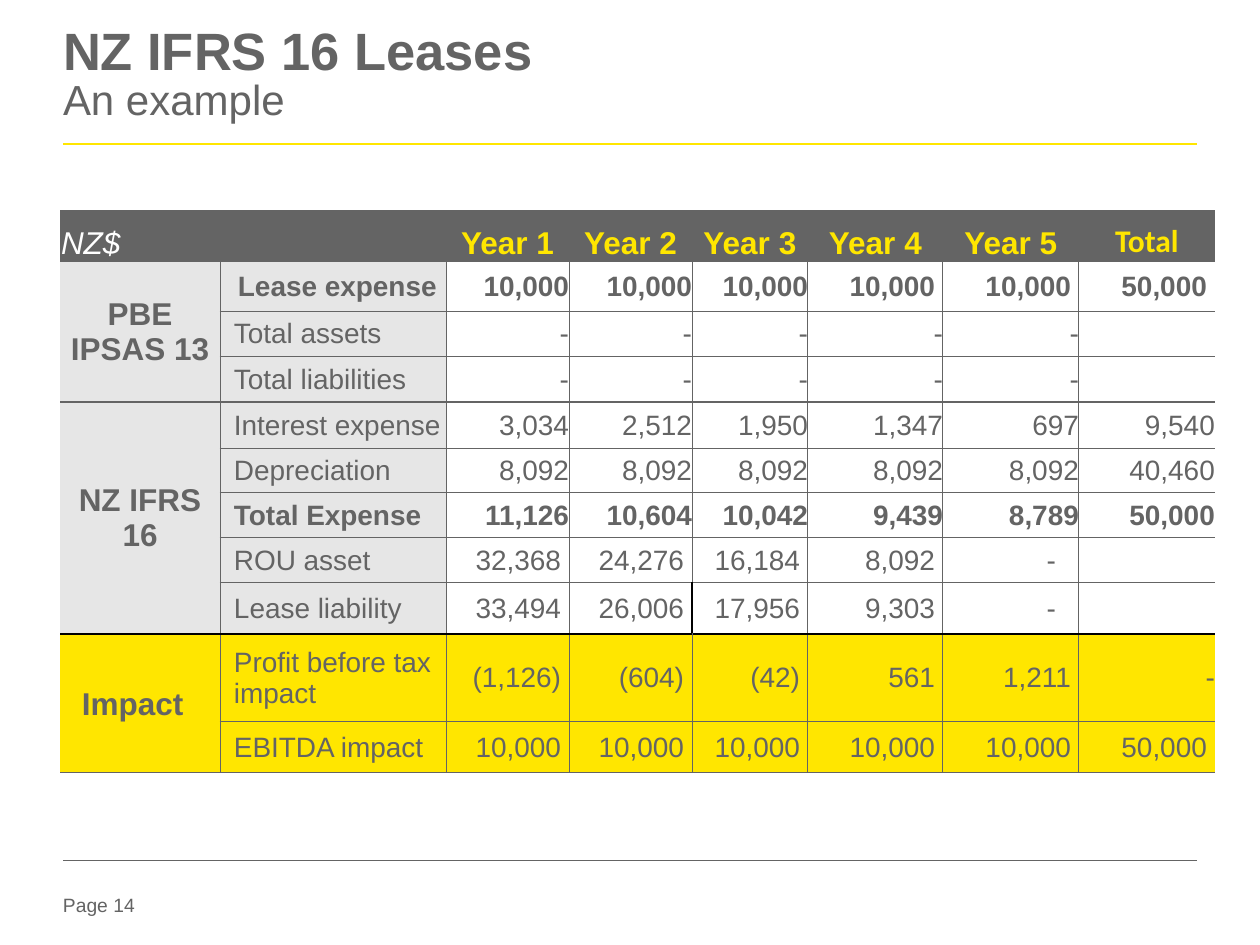
"""Build the lease accounting example slide with its five-year comparison table."""
from typing import NamedTuple, Optional

from lxml.etree import SubElement
from pptx import Presentation
from pptx.dml.color import RGBColor
from pptx.enum.shapes import MSO_CONNECTOR as Connector
from pptx.enum.text import MSO_ANCHOR as Anchor, MSO_AUTO_SIZE as AutoSize, PP_ALIGN as Align
from pptx.oxml.ns import qn
from pptx.util import Emu, Pt

GREY = RGBColor(0x64, 0x64, 0x64)
PALE = RGBColor(0xE6, 0xE6, 0xE6)
YELLOW = RGBColor(0xFF, 0xE6, 0x00)
WHITE = RGBColor(0xFF, 0xFF, 0xFF)
BLACK = RGBColor(0x00, 0x00, 0x00)


class Rule(NamedTuple):
    color: RGBColor
    points: float


class Measure(NamedTuple):
    label: str
    amounts: tuple[str, ...]
    insets: tuple[int, ...] = (0,) * 6
    bold: bool = False
    indent: int = 14


class Standard(NamedTuple):
    name: str
    first_row: int
    last_row: int
    fill: RGBColor


THIN = Rule(GREY, 0.5)
THICK = Rule(GREY, 1.5)
DARK = Rule(BLACK, 1)
PADDED = (8,) * 6

COLUMN_WIDTHS = (160, 226, 123, 123, 116, 135, 136, 136)
ROW_HEIGHTS = (51, 50, 45, 46, 46, 45, 45, 45, 51, 88, 51)
HEADINGS = ("Year 1", "Year 2", "Year 3", "Year 4", "Year 5", "Total")
NO_BALANCE = ("-",) * 5 + ("",)
MEASURES = (
    Measure("Lease expense", ("10,000",) * 5 + ("50,000",), (0, 0, 0, 8, 8, 8), True, 18),
    Measure("Total assets", NO_BALANCE),
    Measure("Total liabilities", NO_BALANCE),
    Measure("Interest expense", ("3,034", "2,512", "1,950", "1,347", "697", "9,540")),
    Measure("Depreciation", ("8,092",) * 5 + ("40,460",)),
    Measure("Total Expense", ("11,126", "10,604", "10,042", "9,439", "8,789", "50,000"), bold=True),
    Measure("ROU asset", ("32,368", "24,276", "16,184", "8,092", "-", ""), (8, 8, 8, 8, 23, 0)),
    Measure("Lease liability", ("33,494", "26,006", "17,956", "9,303", "-", ""), (8, 8, 8, 8, 23, 0)),
    Measure("Profit before tax impact", ("(1,126)", "(604)", "(42)", "561", "1,211", "-"), (8, 8, 8, 8, 8, 0)),
    Measure("EBITDA impact", ("10,000",) * 5 + ("50,000",), PADDED),
)
STANDARDS = (
    Standard("PBE IPSAS 13", 1, 3, PALE),
    Standard("NZ IFRS 16", 4, 8, PALE),
    Standard("Impact", 9, 10, YELLOW),
)
LAST_ROW = len(ROW_HEIGHTS) - 1
LAST_COLUMN = len(COLUMN_WIDTHS) - 1


def px(length: int) -> Emu:
    return Emu(round(length * 914400 / 126))


def add_run(paragraph, text: str, size: int, color: RGBColor = GREY, bold: bool = False,
            italic: bool = False, face: str = "Arial") -> None:
    run = paragraph.add_run()
    run.text = text
    font = run.font
    font.name, font.size, font.bold, font.italic = face, Pt(size), bold, italic
    font.color.rgb = color


def clear_margins(frame) -> None:
    frame.margin_left = frame.margin_top = frame.margin_right = frame.margin_bottom = 0
    frame.word_wrap = True
    frame.auto_size = AutoSize.NONE
    frame.vertical_anchor = Anchor.TOP


def add_divider(slide, y: int, color: RGBColor, points: float) -> None:
    divider = slide.shapes.add_connector(Connector.STRAIGHT, px(63), px(y), px(1197), px(y))
    divider.line.color.rgb = color
    divider.line.width = Pt(points)
    SubElement(divider._element.spPr, qn("a:effectLst"))


def rule_below(row: int, column: int) -> Optional[Rule]:
    if row == 3:
        return THICK
    if row == 8:
        return DARK
    return None if column == 0 and row not in (0, LAST_ROW) else THIN


def rule_right(row: int, column: int) -> Optional[Rule]:
    if (row, column) == (8, 3):
        return DARK
    return None if row == 0 or column == LAST_COLUMN else THIN


def set_borders(cell, row: int, column: int, bottom_row: int) -> None:
    borders = {
        "a:lnL": rule_right(row, column - 1) if column else None,
        "a:lnR": rule_right(row, column),
        "a:lnT": rule_below(row - 1, column) if row else None,
        "a:lnB": rule_below(bottom_row, column),
    }
    properties = cell._tc.get_or_add_tcPr()
    for tag, rule in borders.items():
        line = SubElement(properties, qn(tag))
        if rule is None:
            SubElement(line, qn("a:noFill"))
            continue
        line.set("w", str(Pt(rule.points)))
        SubElement(SubElement(line, qn("a:solidFill")), qn("a:srgbClr")).set("val", str(rule.color))


def format_cell(cell, row: int, column: int) -> None:
    bottom_row = row + cell.span_height - 1 if cell.is_merge_origin else row
    set_borders(cell, row, column, bottom_row)
    cell.margin_left = cell.margin_right = cell.margin_top = px(1)
    cell.margin_bottom = 0
    cell.vertical_anchor = Anchor.MIDDLE
    if row == 0:
        fill = GREY
    elif row >= STANDARDS[-1].first_row:
        fill = YELLOW
    else:
        fill = PALE if column < 2 else None
    if fill is None:
        cell.fill.background()
    else:
        cell.fill.solid()
        cell.fill.fore_color.rgb = fill


def fill_headings(table) -> None:
    unit = table.cell(0, 0)
    unit.vertical_anchor = Anchor.BOTTOM
    add_run(unit.text_frame.paragraphs[0], "NZ$", 18, WHITE, italic=True)
    for column, heading in enumerate(HEADINGS, start=2):
        cell = table.cell(0, column)
        cell.vertical_anchor = Anchor.BOTTOM
        paragraph = cell.text_frame.paragraphs[0]
        paragraph.alignment = Align.CENTER
        face = "Calibri" if heading == "Total" else "Arial"
        add_run(paragraph, heading, 18, YELLOW, bold=True, face=face)


def fill_standard(table, standard: Standard) -> None:
    cell = table.cell(standard.first_row, 0)
    paragraph = cell.text_frame.paragraphs[0]
    if cell.is_merge_origin:
        paragraph.alignment = Align.CENTER
    else:
        cell.vertical_anchor = Anchor.BOTTOM
        cell.margin_left = px(22)
    add_run(paragraph, standard.name, 18, bold=True)


def fill_measure(table, row: int, measure: Measure) -> None:
    label = table.cell(row, 1)
    label.margin_left = px(measure.indent)
    add_run(label.text_frame.paragraphs[0], measure.label, 16, bold=measure.bold)
    for column, (amount, inset) in enumerate(zip(measure.amounts, measure.insets), start=2):
        cell = table.cell(row, column)
        cell.margin_right = px(inset)
        if amount:
            paragraph = cell.text_frame.paragraphs[0]
            paragraph.alignment = Align.RIGHT
            add_run(paragraph, amount, 16, bold=measure.bold)


def add_lease_table(slide) -> None:
    table = slide.shapes.add_table(
        len(ROW_HEIGHTS), len(COLUMN_WIDTHS), px(60), px(210),
        px(sum(COLUMN_WIDTHS)), px(sum(ROW_HEIGHTS))).table
    table.first_row = table.horz_banding = False
    for column, width in zip(table.columns, COLUMN_WIDTHS):
        column.width = px(width)
    for row, height in zip(table.rows, ROW_HEIGHTS):
        row.height = px(height)
    for standard in STANDARDS[:2]:
        table.cell(standard.first_row, 0).merge(table.cell(standard.last_row, 0))
    for row in range(len(ROW_HEIGHTS)):
        for column in range(len(COLUMN_WIDTHS)):
            format_cell(table.cell(row, column), row, column)
    fill_headings(table)
    for standard in STANDARDS:
        fill_standard(table, standard)
    for row, measure in enumerate(MEASURES, start=1):
        fill_measure(table, row, measure)


def add_title(slide) -> None:
    title = slide.shapes.title
    title.left, title.top, title.width, title.height = px(63), px(28), px(1134), px(118)
    clear_margins(title.text_frame)
    heading = title.text_frame.paragraphs[0]
    heading.alignment = Align.LEFT
    heading.line_spacing = 0.85
    add_run(heading, "NZ IFRS 16 Leases", 30, bold=True)
    heading.add_line_break()
    add_run(heading, "An example", 24)


def main() -> None:
    deck = Presentation()
    deck.slide_width, deck.slide_height = px(1260), px(945)
    slide = deck.slides.add_slide(deck.slide_layouts[5])
    add_title(slide)
    add_divider(slide, 144, YELLOW, 1.5)
    add_divider(slide, 860, GREY, 0.25)
    page_number = slide.shapes.add_textbox(px(63), px(893), px(100), px(28)).text_frame
    clear_margins(page_number)
    add_run(page_number.paragraphs[0], "Page 14", 11)
    add_lease_table(slide)
    deck.save("out.pptx")


if __name__ == "__main__":
    main()
